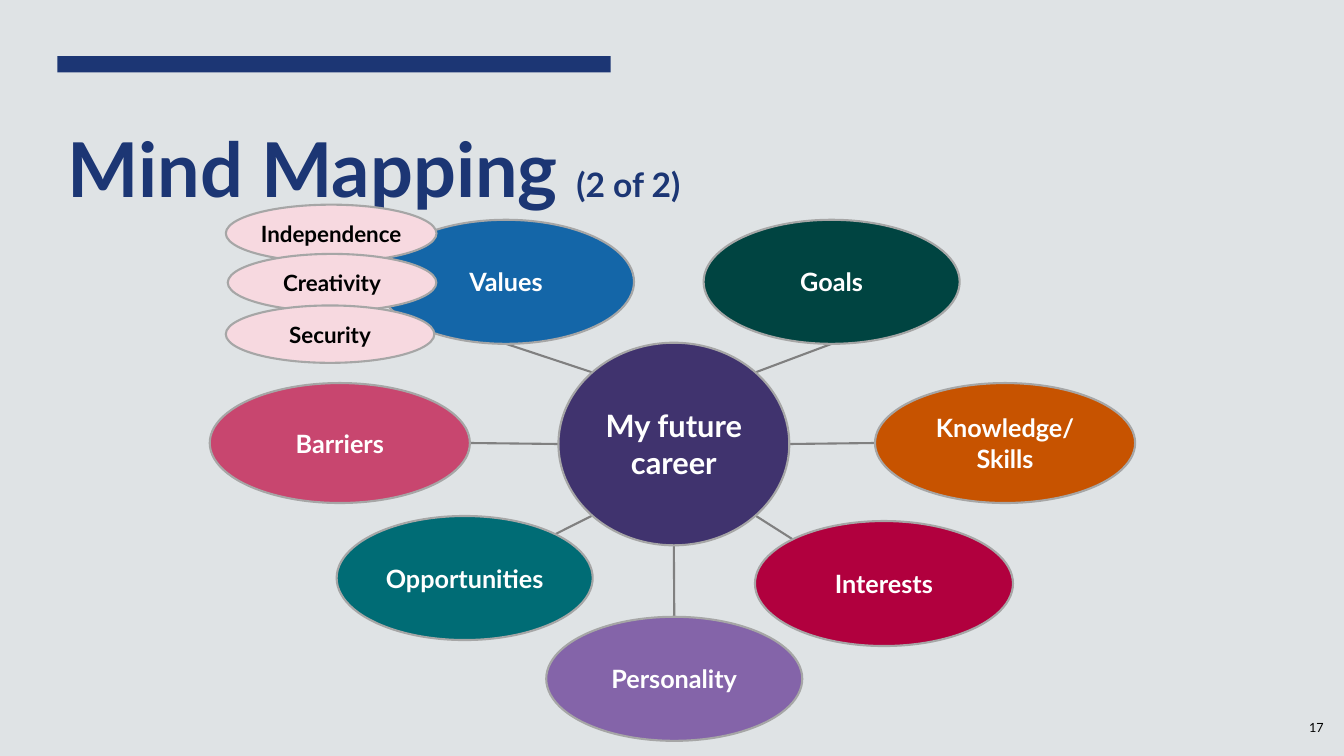
from dataclasses import dataclass
from math import cos, radians, sin

from lxml import etree
from pptx import Presentation
from pptx.dml.color import RGBColor
from pptx.enum.shapes import MSO_CONNECTOR, MSO_SHAPE
from pptx.enum.text import MSO_ANCHOR, MSO_AUTO_SIZE, PP_ALIGN
from pptx.oxml.ns import qn
from pptx.slide import Slide
from pptx.text.text import TextFrame, _Paragraph
from pptx.util import Pt

OVAL, RECT = MSO_SHAPE.OVAL, MSO_SHAPE.RECTANGLE
STRAIGHT = MSO_CONNECTOR.STRAIGHT
MIDDLE = MSO_ANCHOR.MIDDLE
LEFT, CENTER, RIGHT = PP_ALIGN.LEFT, PP_ALIGN.CENTER, PP_ALIGN.RIGHT
FIXED = MSO_AUTO_SIZE.NONE


@dataclass(frozen=True)
class Theme:
    font: str = "Lato"
    back: str = "DFE3E5"
    navy: str = "1C3674"
    white: str = "FFFFFF"
    black: str = "000000"
    spoke: str = "808080"
    edge: str = "A6A6A6"
    hub: str = "40336E"
    note: str = "F7D9E0"
    head_size: int = 54
    part_size: int = 24
    hub_size: int = 22
    topic_size: int = 18
    note_size: int = 16
    page_size: int = 9
    stroke: float = 1.5
    inset: float = 2.2


@dataclass(frozen=True)
class Bubble:
    text: str
    left: float
    top: float
    width: float
    height: float
    fill: str
    size: int
    ink: str

    def rim(self, angle: float) -> tuple[float, float]:
        turn = radians(angle)
        return (
            self.left + self.width / 2 * (1 + cos(turn)),
            self.top + self.height / 2 * (1 + sin(turn)),
        )


@dataclass(frozen=True)
class Spoke:
    topic: Bubble
    start: float
    end: float


THEME = Theme()


def color(code: str) -> RGBColor:
    return RGBColor.from_string(code)


def add_run(para: _Paragraph, text: str, size: int, ink: str, bold: bool = True) -> None:
    run = para.add_run()
    run.text = text
    run.font.name = THEME.font
    run.font.size = Pt(size)
    run.font.bold = bold
    run.font.color.rgb = color(ink)


def set_frame(frame: TextFrame, align: PP_ALIGN) -> _Paragraph:
    frame.word_wrap = True
    frame.auto_size = FIXED
    frame.vertical_anchor = MIDDLE
    para = frame.paragraphs[0]
    para.alignment = align
    return para


def draw_bubble(slide: Slide, item: Bubble) -> None:
    shape = slide.shapes.add_shape(
        OVAL, Pt(item.left), Pt(item.top), Pt(item.width), Pt(item.height)
    )
    shape.shadow.inherit = False
    shape.fill.solid()
    shape.fill.fore_color.rgb = color(item.fill)
    shape.line.color.rgb = color(THEME.edge)
    shape.line.width = Pt(THEME.stroke)
    frame = shape.text_frame
    frame.margin_left = frame.margin_right = Pt(THEME.inset)
    frame.margin_top = frame.margin_bottom = Pt(THEME.inset)
    para = set_frame(frame, CENTER)
    for row, text in enumerate(item.text.split("\n")):
        if row:
            para.add_line_break()
        add_run(para, text, item.size, item.ink)


def draw_spoke(slide: Slide, hub: Bubble, spoke: Spoke) -> None:
    ends = spoke.topic.rim(spoke.start) + hub.rim(spoke.end)
    line = slide.shapes.add_connector(STRAIGHT, *(Pt(value) for value in ends))
    line.line.color.rgb = color(THEME.spoke)
    line.line.width = Pt(THEME.stroke)
    etree.SubElement(line._element.spPr, qn("a:effectLst"))


def draw_bar(slide: Slide) -> None:
    bar = slide.shapes.add_shape(RECT, Pt(41), Pt(40.2), Pt(395.3), Pt(11.5))
    bar.shadow.inherit = False
    bar.fill.solid()
    bar.fill.fore_color.rgb = color(THEME.navy)
    bar.line.fill.background()


def draw_title(slide: Slide) -> None:
    title = slide.shapes.title
    title.left, title.top = Pt(41), Pt(77)
    title.width, title.height = Pt(561.6), Pt(85.7)
    para = set_frame(title.text_frame, LEFT)
    add_run(para, "Mind Mapping ", THEME.head_size, THEME.navy)
    add_run(para, "(2 of 2)", THEME.part_size, THEME.navy)


def draw_page(slide: Slide) -> None:
    box = slide.shapes.add_textbox(Pt(902.2), Pt(505.4), Pt(50.4), Pt(28.8))
    para = set_frame(box.text_frame, RIGHT)
    add_run(para, "17", THEME.page_size, THEME.black, False)


def topic(
    text: str, left: float, top: float, fill: str,
    width: float = 182.9, height: float = 88.6,
) -> Bubble:
    return Bubble(text, left, top, width, height, fill, THEME.topic_size, THEME.white)


def note(text: str, left: float, top: float, width: float = 149) -> Bubble:
    return Bubble(text, left, top, width, 41, THEME.note, THEME.note_size, THEME.black)


HUB = Bubble(
    "My future career", 398.9, 244.8, 164.9, 144.7,
    THEME.hub, THEME.hub_size, THEME.white,
)
SPOKES = [
    Spoke(topic("Goals", 502.6, 157, "004441"), 90, 315),
    Spoke(topic("Knowledge/\nSkills", 625, 273.6, "C75300", 185.8, 85.7), 180, 0),
    Spoke(topic("Interests", 539.3, 372.2, "B1003E", 184.3, 89.3), 225, 45),
    Spoke(topic("Personality", 390.2, 440.6, "8464A9"), 270, 90),
    Spoke(topic("Opportunities", 240.5, 368.6, "006C75"), 315, 135),
    Spoke(topic("Barriers", 149.8, 273.6, "C8466F", 185.8, 85.7), 0, 180),
    Spoke(topic("Values", 270, 157, "1466A8"), 90, 225),
]
NOTES = [
    note("Independence", 161.3, 146.2, 150.5),
    note("Creativity", 162.7, 181.4),
    note("Security", 161.3, 218.2),
]


def main() -> None:
    deck = Presentation()
    deck.slide_width, deck.slide_height = Pt(960), Pt(540)
    slide = deck.slides.add_slide(deck.slide_layouts[5])
    slide.background.fill.solid()
    slide.background.fill.fore_color.rgb = color(THEME.back)
    draw_bar(slide)
    draw_title(slide)
    for spoke in SPOKES:
        draw_spoke(slide, HUB, spoke)
    for item in [HUB, *(spoke.topic for spoke in SPOKES), *NOTES]:
        draw_bubble(slide, item)
    draw_page(slide)
    deck.save("out.pptx")


if __name__ == "__main__":
    main()
